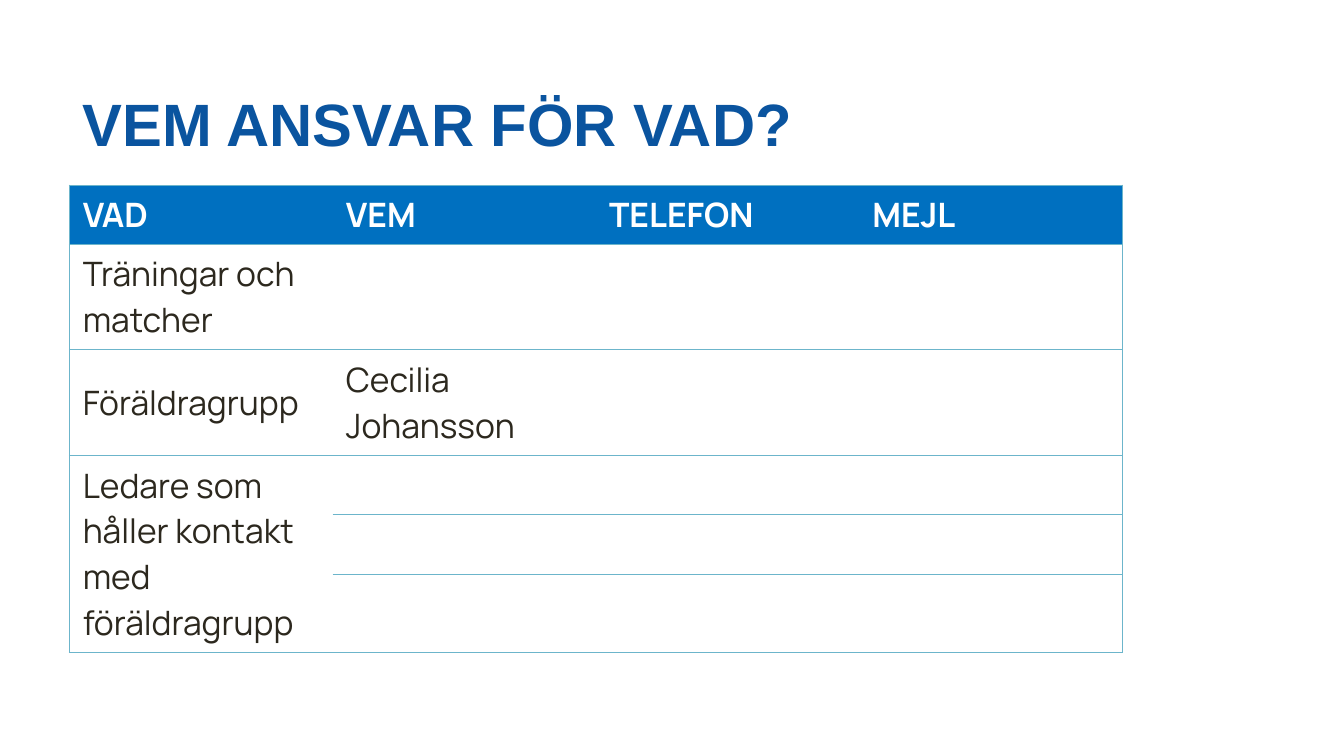
from lxml import etree
from pptx import Presentation
from pptx.dml.color import RGBColor
from pptx.enum import text
from pptx.oxml import ns
from pptx.util import Cm, Pt

BLUE, TITLE_BLUE, BORDER = "0070C0", "0A549F", "6CB5CB"
DARK, WHITE = "2C281E", "FFFFFF"
ROWS = [
    ["VAD", "VEM", "TELEFON", "MEJL"],
    ["Träningar och matcher", "", "", ""],
    ["Föräldragrupp", "Cecilia Johansson", "", ""],
    ["Ledare som håller kontakt med föräldragrupp", "", "", ""],
    ["", "", "", ""],
    ["", "", "", ""],
]
ROW_HEIGHTS = [1.12, 1.99, 2, 1.12, 1.12, 1.48]
MERGED_ROWS = (3, 5)


def color(value):
    return RGBColor.from_string(value)


def add_element(parent, tag, **attributes):
    return etree.SubElement(parent, ns.qn(tag), attributes)


def format_run(run, value, **formats):
    for name, setting in formats.items():
        setattr(run.font, name, setting)
    run.font.color.rgb = color(value)


def add_title(slide, content):
    shape = slide.shapes.add_textbox(Cm(1.31), Cm(0.6), Cm(17.93), Cm(2.54))
    frame = shape.text_frame
    frame.word_wrap = True
    frame.vertical_anchor = text.MSO_ANCHOR.BOTTOM
    paragraph = frame.paragraphs[0]
    paragraph.line_spacing = 0.9
    run = paragraph.add_run()
    run.text = content
    format_run(run, TITLE_BLUE, name="Arial", size=Pt(32), bold=True)


def set_borders(cell, visible):
    properties = cell._tc.get_or_add_tcPr()
    for side in "LRTB":
        line = add_element(properties, f"a:ln{side}", w=str(Pt(0.5)))
        if side in visible:
            fill = add_element(line, "a:solidFill")
            add_element(fill, "a:srgbClr", val=BORDER)
        else:
            add_element(line, "a:noFill")


def fill_cell(cell, content, header):
    cell.vertical_anchor = text.MSO_ANCHOR.MIDDLE
    paragraph = cell.text_frame.paragraphs[0]
    if content:
        run = paragraph.add_run()
        run.text = content
        format_run(run, WHITE if header else DARK,
                   name="Manrope", size=Pt(18), bold=header)
    else:
        # The end mark gives an empty cell its line height
        end = add_element(paragraph._p, "a:endParaRPr", sz="1800")
        add_element(end, "a:latin", typeface="Manrope")
    if header:
        cell.fill.solid()
        cell.fill.fore_color.rgb = color(BLUE)
    else:
        cell.fill.background()


def visible_sides(row, column):
    first, last = MERGED_ROWS
    sides = "L" if column == 0 else "R" if column == len(ROWS[0]) - 1 else ""
    if column > 0 or row <= first:
        sides += "T"
    if column > 0 or row <= first or row == last:
        sides += "B"
    return sides


def add_duty_table(slide):
    frame = slide.shapes.add_table(len(ROWS), len(ROWS[0]), Cm(1.31), Cm(3.5),
                                   Cm(19.9), Cm(sum(ROW_HEIGHTS)))
    table = frame.table
    table.first_row = table.horz_banding = False
    for row, contents in enumerate(ROWS):
        table.rows[row].height = Cm(ROW_HEIGHTS[row])
        for column, content in enumerate(contents):
            cell = table.cell(row, column)
            set_borders(cell, visible_sides(row, column))
            fill_cell(cell, content, header=row == 0)
    first, last = MERGED_ROWS
    table.cell(first, 0).merge(table.cell(last, 0))


def main():
    presentation = Presentation()
    presentation.slide_width, presentation.slide_height = Cm(25.4), Cm(14.29)
    slide = presentation.slides.add_slide(presentation.slide_layouts[6])

    # Heading
    add_title(slide, "VEM ANSVAR FÖR VAD?")

    # Who is responsible for what
    add_duty_table(slide)

    presentation.save("out.pptx")


if __name__ == "__main__":
    main()
